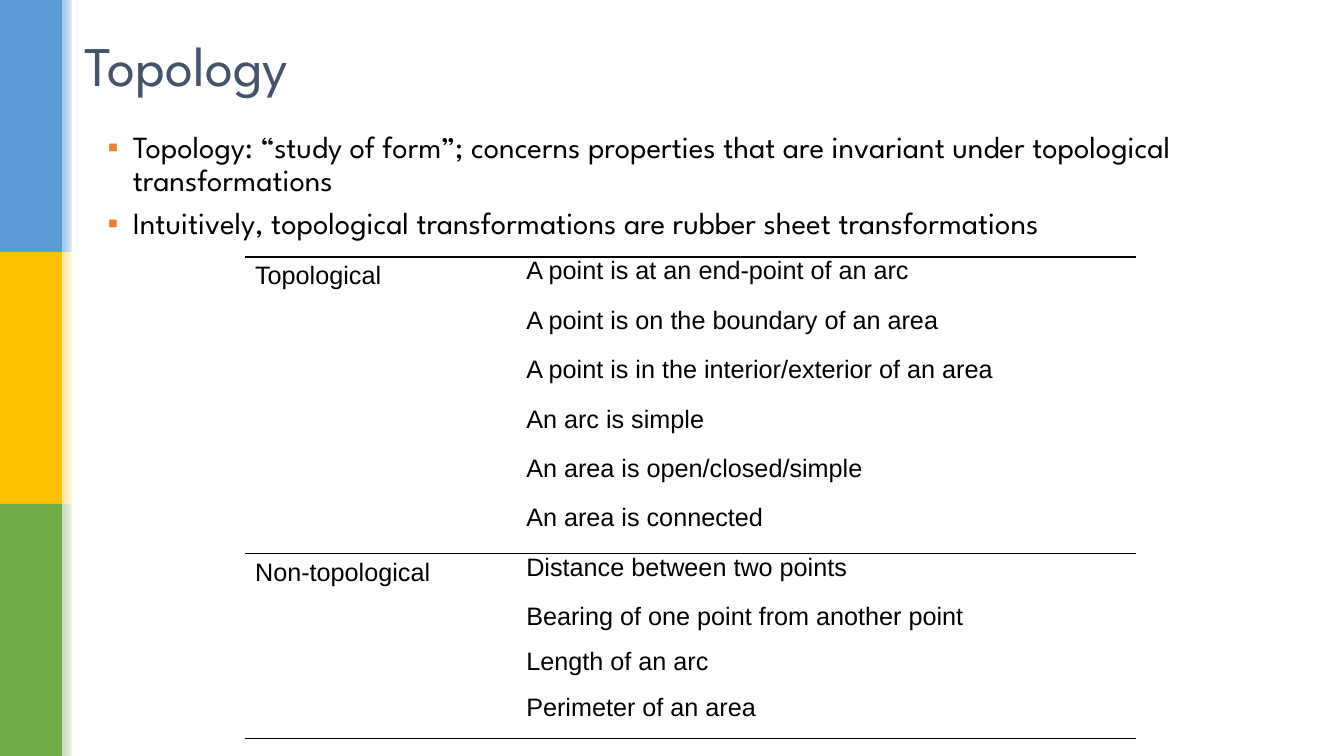
"""Build the slide on topology and its topological and non-topological properties."""
from dataclasses import dataclass

from lxml import etree
from pptx import Presentation
from pptx.dml.color import RGBColor
from pptx.enum.shapes import MSO_SHAPE
from pptx.enum.text import MSO_ANCHOR
from pptx.oxml.ns import qn
from pptx.util import Inches, Pt

RECTANGLE = MSO_SHAPE.RECTANGLE
MIDDLE = MSO_ANCHOR.MIDDLE
HEADING_FONT = "League Spartan"
TABLE_FONT = "Arial"
BLACK = "000000"
WHITE = "FFFFFF"
ORANGE = "ED7D31"
BAND_HEIGHT = 2.5
BAND_WIDTH = 0.62


@dataclass
class Band:
    color: str
    tint: str


@dataclass
class Category:
    name: str
    properties: list[str]


BANDS = [
    Band("5B9BD5", "9DC3E6"),
    Band("FFC000", "FFE699"),
    Band("70AD47", "C5E0B4"),
]
STATEMENTS = [
    "Topology: “study of form”; concerns properties that are invariant under topological transformations",
    "Intuitively, topological transformations are rubber sheet transformations",
]
CATEGORIES = [
    Category("Topological", [
        "A point is at an end-point of an arc",
        "A point is on the boundary of an area",
        "A point is in the interior/exterior of an area",
        "An arc is simple",
        "An area is open/closed/simple",
        "An area is connected",
    ]),
    Category("Non-topological", [
        "Distance between two points",
        "Bearing of one point from another point",
        "Length of an arc",
        "Perimeter of an area",
    ]),
]
COLUMN_WIDTHS = [2.69, 6.15]
ROW_HEIGHTS = [0.49] * 7 + [0.45] * 3


def rgb(color: str) -> RGBColor:
    return RGBColor.from_string(color)


def add_block(slide, left: float, top: float, width: float, height: float, color: str, fade: bool = False) -> None:
    block = slide.shapes.add_shape(RECTANGLE, Inches(left), Inches(top), Inches(width), Inches(height))
    block.shadow.inherit = False
    block.line.fill.background()
    if fade:
        block.fill.gradient()
        block.fill.gradient_angle = 0
        for stop, shade in zip(block.fill.gradient_stops, (color, WHITE)):
            stop.color.rgb = rgb(shade)
    else:
        block.fill.solid()
        block.fill.fore_color.rgb = rgb(color)


def add_run(paragraph, text: str, size: float, font: str, color: str) -> None:
    run = paragraph.add_run()
    run.text = text
    run.font.size = Pt(size)
    run.font.name = font
    run.font.color.rgb = rgb(color)


def add_frame(slide, left: float, top: float, width: float, height: float):
    frame = slide.shapes.add_textbox(Inches(left), Inches(top), Inches(width), Inches(height)).text_frame
    frame.word_wrap = True
    return frame


def add_bullet(paragraph) -> None:
    properties = paragraph._p.get_or_add_pPr()
    properties.set("marL", str(Inches(0.25)))
    properties.set("indent", str(-Inches(0.25)))
    bullet_color = etree.SubElement(properties, qn("a:buClr"))
    etree.SubElement(bullet_color, qn("a:srgbClr"), val=ORANGE)
    etree.SubElement(properties, qn("a:buFont"), typeface=TABLE_FONT)
    etree.SubElement(properties, qn("a:buChar"), char="▪")


def set_borders(cell, top: bool, bottom: bool) -> None:
    properties = cell._tc.get_or_add_tcPr()
    sides = {"lnL": False, "lnR": False, "lnT": top, "lnB": bottom}
    for position, (side, visible) in enumerate(sides.items()):
        border = etree.Element(qn(f"a:{side}"), w=str(Pt(1)))
        if visible:
            fill = etree.SubElement(border, qn("a:solidFill"))
            etree.SubElement(fill, qn("a:srgbClr"), val=BLACK)
        else:
            etree.SubElement(border, qn("a:noFill"))
        properties.insert(position, border)


def add_properties_table(slide) -> None:
    table = slide.shapes.add_table(
        len(ROW_HEIGHTS), len(COLUMN_WIDTHS), Inches(2.43), Inches(2.55),
        Inches(sum(COLUMN_WIDTHS)), Inches(sum(ROW_HEIGHTS))).table
    table.first_row = False
    table.horz_banding = False
    for column, width in zip(table.columns, COLUMN_WIDTHS):
        column.width = Inches(width)
    for row, height in zip(table.rows, ROW_HEIGHTS):
        row.height = Inches(height)

    row_number = 0
    for category in CATEGORIES:
        last = len(category.properties) - 1
        for place, statement in enumerate(category.properties):
            name_cell, statement_cell = table.rows[row_number].cells
            statement_cell.margin_top = statement_cell.margin_bottom = 0
            for cell in (name_cell, statement_cell):
                cell.fill.background()
                set_borders(cell, place == 0, place == last)
            if place == 0:
                add_run(name_cell.text_frame.paragraphs[0], category.name, 18, TABLE_FONT, BLACK)
            add_run(statement_cell.text_frame.paragraphs[0], statement, 18, TABLE_FONT, BLACK)
            row_number += 1


def main() -> None:
    presentation = Presentation()
    presentation.slide_width = Inches(13.33)
    presentation.slide_height = Inches(7.5)
    slide = presentation.slides.add_slide(presentation.slide_layouts[6])

    for number, band in enumerate(BANDS):
        top = number * BAND_HEIGHT
        add_block(slide, 0, top, BAND_WIDTH, BAND_HEIGHT, band.color)
        add_block(slide, BAND_WIDTH, top, 0.16, BAND_HEIGHT, band.tint, fade=True)
    add_block(slide, 0.71, 0, 0.05, 7.5, WHITE)

    title = add_frame(slide, 0.74, 0.09, 11.5, 1.1)
    title.vertical_anchor = MIDDLE
    add_run(title.paragraphs[0], "Topology", 40, HEADING_FONT, "44546A")

    body = add_frame(slide, 0.97, 1.26, 11.96, 1.78)
    for number, statement in enumerate(STATEMENTS):
        paragraph = body.add_paragraph() if number else body.paragraphs[0]
        add_bullet(paragraph)
        paragraph.line_spacing = 0.9
        if number:
            paragraph.space_before = Pt(6.6)
        add_run(paragraph, statement, 22, HEADING_FONT, BLACK)

    add_properties_table(slide)
    presentation.save("out.pptx")


if __name__ == "__main__":
    main()
